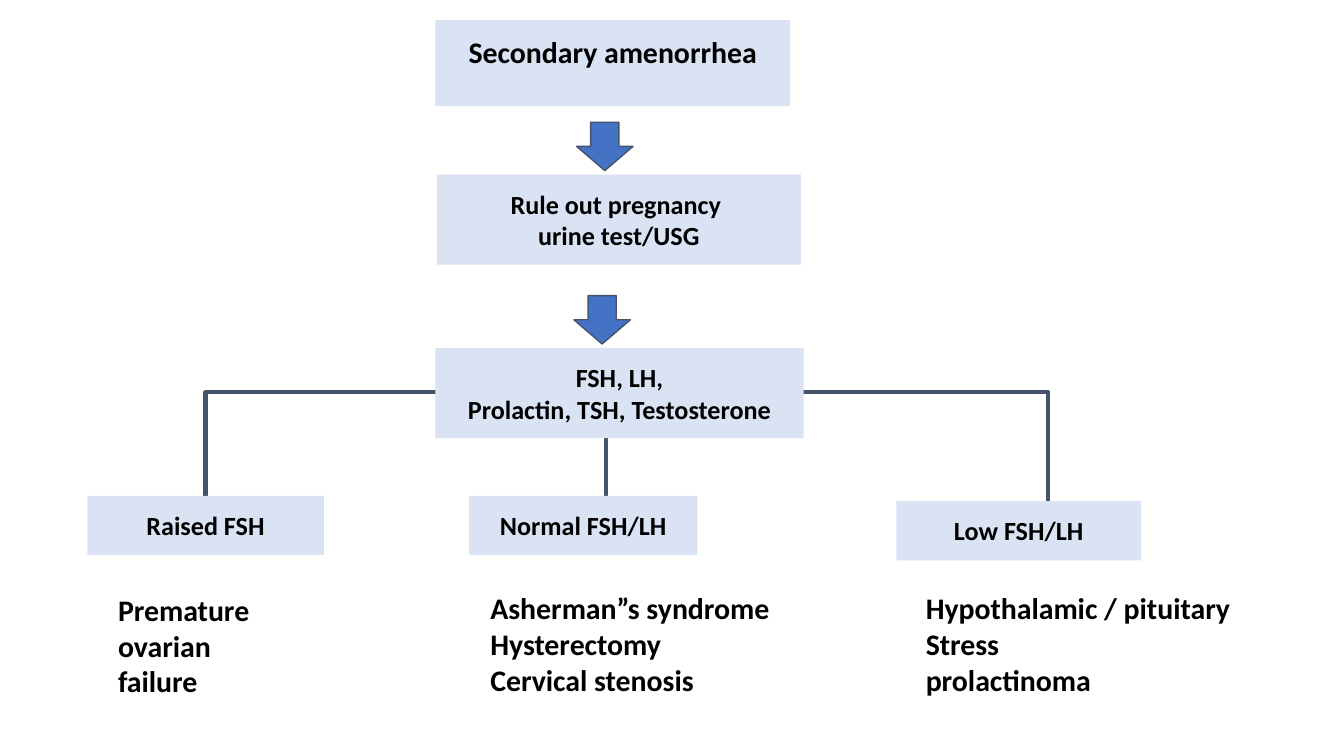
from lxml import etree
from pptx import Presentation
from pptx.dml.color import RGBColor
from pptx.enum.shapes import MSO_CONNECTOR as LINK, MSO_SHAPE as SHAPE
from pptx.enum.text import MSO_ANCHOR as ANCHOR, PP_ALIGN as ALIGN
from pptx.oxml.ns import qn
from pptx.util import Inches, Pt

PALE = RGBColor(0xDA, 0xE3, 0xF3)
BLUE = RGBColor(0x44, 0x72, 0xC4)
SLATE = RGBColor(0x44, 0x54, 0x6A)
BLACK = RGBColor(0, 0, 0)

prs = Presentation()
prs.slide_width = Inches(10)
prs.slide_height = Inches(10 * 9 / 16)
slide = prs.slides.add_slide(prs.slide_layouts[6])
shapes = slide.shapes


def write(shape, text, size, align, indent=0):
    """Fill a shape with bold text: \\n parts paragraphs, \\v breaks lines."""
    frame = shape.text_frame
    frame.word_wrap = True
    frame.vertical_anchor = ANCHOR.TOP
    frame.margin_left = frame.margin_right = Inches(0.1)
    frame.margin_top = frame.margin_bottom = Inches(0.1)
    frame.text = text
    for para in frame.paragraphs:
        para.alignment = align
        if indent:
            props = para._p.get_or_add_pPr()
            props.set("marL", str(Inches(indent)))
            props.set("indent", "0")
        font = para.font
        font.name, font.size, font.bold = "Calibri", Pt(size), True
        font.color.rgb = BLACK


# Arrows between the steps
for left, top in [(4.29, 0.91), (4.27, 2.2)]:
    arrow = shapes.add_shape(SHAPE.DOWN_ARROW, Inches(left), Inches(top),
                             Inches(0.42), Inches(0.36))
    arrow.shadow.inherit = False
    arrow.fill.solid()
    arrow.fill.fore_color.rgb = BLUE
    arrow.line.color.rgb = SLATE
    arrow.line.width = Pt(0.75)

# Branches from the hormone tests to the three results
branches = [
    (LINK.ELBOW, 4.12, 2.92, 1.53, 3.69),
    (LINK.STRAIGHT, 4.51, 2.79, 4.51, 3.73),
    (LINK.ELBOW, 5.88, 2.92, 7.8, 3.78),
]
for kind, *ends in branches:
    link = shapes.add_connector(kind, *map(Inches, ends))
    link.line.color.rgb = SLATE
    link.line.width = Pt(2.25)
    props = link._element.spPr
    etree.SubElement(props, qn("a:effectLst"))
    if kind == LINK.ELBOW:
        # Turn down only at the far end
        guides = props.find(qn("a:prstGeom")).get_or_add_avLst()
        etree.SubElement(guides, qn("a:gd"), name="adj1", fmla="val 100000")

# Steps and results
boxes = [
    (3.24, 0.15, 2.64, 0.64, 16, "Secondary amenorrhea"),
    (3.25, 1.3, 2.71, 0.67, 14, "Rule out pregnancy \vurine test/USG"),
    (3.24, 2.59, 2.74, 0.67, 14, "FSH, LH,\vProlactin, TSH, Testosterone"),
    (0.65, 3.69, 1.76, 0.44, 14, "Raised FSH"),
    (3.49, 3.69, 1.7, 0.44, 14, "Normal FSH/LH"),
    (6.67, 3.73, 1.82, 0.44, 14, "Low FSH/LH"),
]
for *place, size, text in boxes:
    box = shapes.add_shape(SHAPE.RECTANGLE, *map(Inches, place))
    box.shadow.inherit = False
    box.fill.solid()
    box.fill.fore_color.rgb = PALE
    box.line.fill.background()
    write(box, text, size, ALIGN.CENTER)

# Causes under each result
causes = [
    (0.64, 4.3, 1.4, 1.28, "Premature ovarian failure"),
    (3.41, 4.29, 2.59, 1.28,
     "Asherman”s syndrome\nHysterectomy\nCervical stenosis"),
    (6.65, 4.29, 2.93, 1.01,
     "Hypothalamic / pituitary\vStress\vprolactinoma"),
]
for *place, text in causes:
    note = shapes.add_textbox(*map(Inches, place))
    write(note, text, 16, ALIGN.LEFT, indent=0.14)

prs.save("out.pptx")
